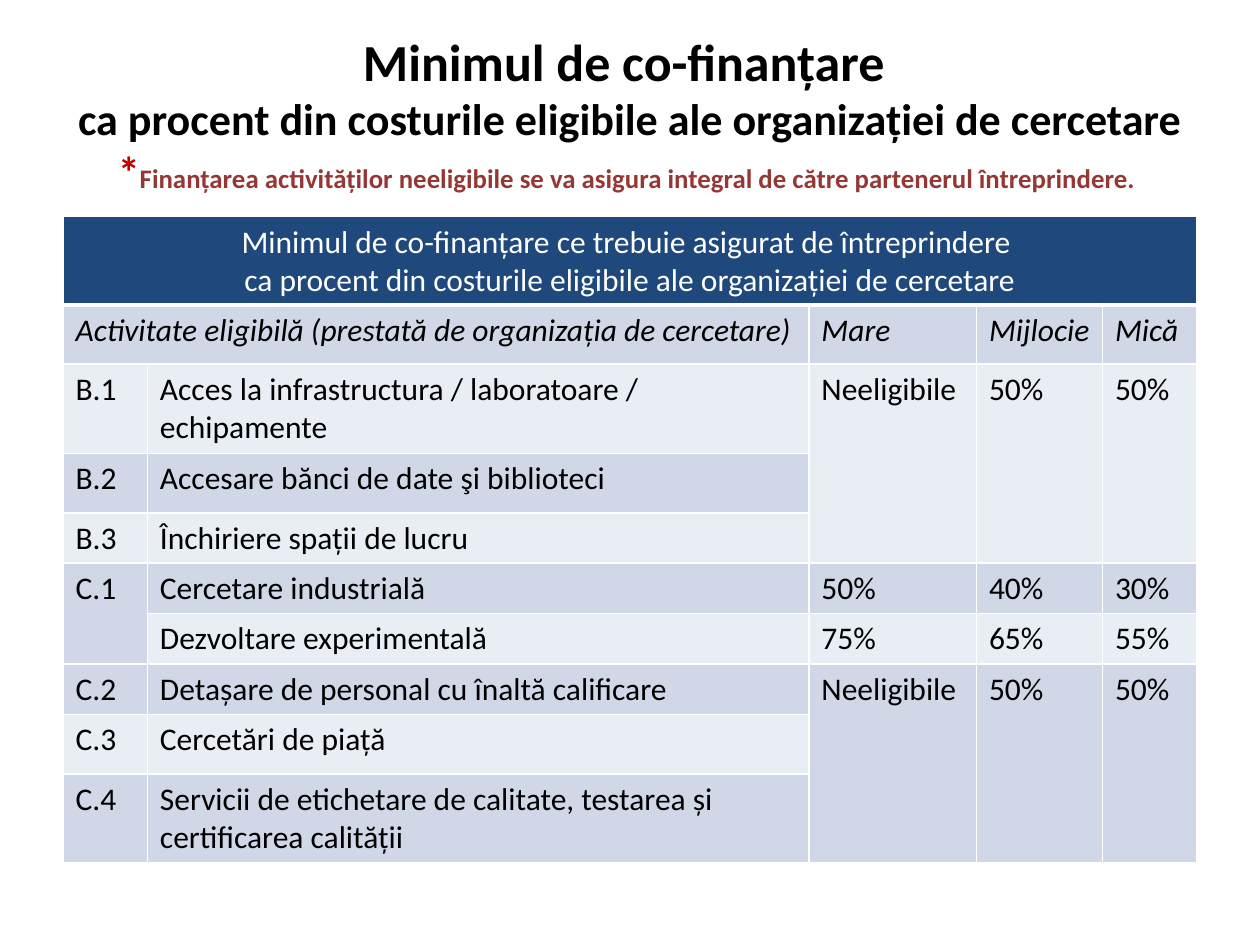
from dataclasses import dataclass
from typing import NamedTuple

from lxml.etree import SubElement
from pptx import Presentation
from pptx.dml.color import RGBColor
from pptx.enum.text import MSO_ANCHOR, PP_ALIGN
from pptx.oxml.ns import qn
from pptx.util import Inches, Pt


@dataclass(frozen=True)
class Theme:
    font: str = "Calibri"
    black: str = "000000"
    white: str = "FFFFFF"
    red: str = "C00000"
    maroon: str = "953735"
    header: str = "1F497D"
    dark_band: str = "D0D8E8"
    light_band: str = "E9EDF4"
    title_size: float = 29.7
    subtitle_size: float = 25.2
    note_size: float = 15.3
    table_size: float = 18
    border: float = 1
    header_border: float = 3


class TitleRun(NamedTuple):
    text: str
    size: float
    color: str
    breaks: bool = False


class Cell(NamedTuple):
    row: int
    column: int
    text: str
    rows: int = 1
    columns: int = 1


THEME = Theme()

TITLE_RUNS = [
    TitleRun("Minimul de co-finanțare ", THEME.title_size, THEME.black, True),
    TitleRun("ca procent din costurile eligibile ale organizației de cercetare",
             THEME.subtitle_size, THEME.black, True),
    TitleRun("*", THEME.subtitle_size, THEME.red),
    TitleRun("Finanțarea activităților neeligibile se va asigura integral "
             "de către partenerul întreprindere. ", THEME.note_size, THEME.maroon),
]

COLUMN_WIDTHS = [0.67, 5.25, 1.33, 1, 0.75]
ROW_HEIGHTS = [0.7, 0.47, 0.71, 0.47, 0.4, 0.4, 0.4, 0.4, 0.47, 0.71]

CELLS = [
    Cell(0, 0, "Minimul de co-finanțare ce trebuie asigurat de întreprindere \n"
               "ca procent din costurile eligibile ale organizației de cercetare", columns=5),
    Cell(1, 0, "Activitate eligibilă (prestată de organizația de cercetare)", columns=2),
    Cell(1, 2, "Mare"),
    Cell(1, 3, "Mijlocie"),
    Cell(1, 4, "Mică"),
    Cell(2, 0, "B.1"),
    Cell(2, 1, "Acces la infrastructura / laboratoare / echipamente"),
    Cell(2, 2, "Neeligibile", rows=3),
    Cell(2, 3, "50%", rows=3),
    Cell(2, 4, "50%", rows=3),
    Cell(3, 0, "B.2"),
    Cell(3, 1, "Accesare bănci de date şi biblioteci"),
    Cell(4, 0, "B.3"),
    Cell(4, 1, "Închiriere spații de lucru"),
    Cell(5, 0, "C.1", rows=2),
    Cell(5, 1, "Cercetare industrială"),
    Cell(5, 2, "50%"),
    Cell(5, 3, "40%"),
    Cell(5, 4, "30%"),
    Cell(6, 1, "Dezvoltare experimentală"),
    Cell(6, 2, "75%"),
    Cell(6, 3, "65%"),
    Cell(6, 4, "55%"),
    Cell(7, 0, "C.2"),
    Cell(7, 1, "Detașare de personal cu înaltă calificare"),
    Cell(7, 2, "Neeligibile", rows=3),
    Cell(7, 3, "50%", rows=3),
    Cell(7, 4, "50%", rows=3),
    Cell(8, 0, "C.3"),
    Cell(8, 1, "Cercetări de piață"),
    Cell(9, 0, "C.4"),
    Cell(9, 1, "Servicii de etichetare de calitate, testarea și certificarea calității"),
]


def format_font(font, color: str, **values) -> None:
    for name, value in {"name": THEME.font, **values}.items():
        setattr(font, name, value)
    font.color.rgb = RGBColor.from_string(color)


def add_title(slide) -> None:
    shape = slide.shapes.add_textbox(Inches(0.5), Inches(0.3), Inches(9), Inches(1.2))
    frame = shape.text_frame
    frame.word_wrap = True
    frame.vertical_anchor = MSO_ANCHOR.MIDDLE
    paragraph = frame.paragraphs[0]
    paragraph.alignment = PP_ALIGN.CENTER
    for title_run in TITLE_RUNS:
        run = paragraph.add_run()
        run.text = title_run.text
        format_font(run.font, title_run.color, size=Pt(title_run.size), bold=True)
        if title_run.breaks:
            paragraph.add_line_break()


def set_borders(table_cell, row: int) -> None:
    properties = table_cell._tc.get_or_add_tcPr()
    widths = {
        "a:lnL": THEME.border,
        "a:lnR": THEME.border,
        "a:lnT": THEME.header_border if row == 1 else THEME.border,
        "a:lnB": THEME.header_border if row == 0 else THEME.border,
    }
    for position, (tag, width) in enumerate(widths.items()):
        line = SubElement(properties, qn(tag), w=str(Pt(width)))
        fill = SubElement(line, qn("a:solidFill"))
        SubElement(fill, qn("a:srgbClr"), val=THEME.white)
        properties.insert(position, line)


def fill_cell(table, cell: Cell) -> None:
    table_cell = table.cell(cell.row, cell.column)
    if cell.rows > 1 or cell.columns > 1:
        table_cell.merge(table.cell(cell.row + cell.rows - 1, cell.column + cell.columns - 1))
    table_cell.text = cell.text
    is_header = cell.row == 0
    for paragraph in table_cell.text_frame.paragraphs:
        paragraph.alignment = PP_ALIGN.CENTER if is_header else PP_ALIGN.LEFT
        for run in paragraph.runs:
            format_font(run.font, THEME.white if is_header else THEME.black,
                        size=Pt(THEME.table_size), bold=False, italic=cell.row == 1)


def add_cost_table(slide) -> None:
    shape = slide.shapes.add_table(
        len(ROW_HEIGHTS), len(COLUMN_WIDTHS), Inches(0.5), Inches(1.72),
        Inches(sum(COLUMN_WIDTHS)), Inches(sum(ROW_HEIGHTS)))
    table = shape.table
    table.first_row = False
    table.horz_banding = False
    for column, width in zip(table.columns, COLUMN_WIDTHS):
        column.width = Inches(width)
    for index, (row, height) in enumerate(zip(table.rows, ROW_HEIGHTS)):
        row.height = Inches(height)
        band = THEME.dark_band if index % 2 else THEME.light_band
        for table_cell in row.cells:
            table_cell.fill.solid()
            table_cell.fill.fore_color.rgb = RGBColor.from_string(
                band if index else THEME.header)
            set_borders(table_cell, index)
    for cell in CELLS:
        fill_cell(table, cell)


def main() -> None:
    presentation = Presentation()
    presentation.slide_width = Inches(10)
    presentation.slide_height = Inches(7.5)
    slide = presentation.slides.add_slide(presentation.slide_layouts[6])
    add_title(slide)
    add_cost_table(slide)
    presentation.save("out.pptx")


if __name__ == "__main__":
    main()
